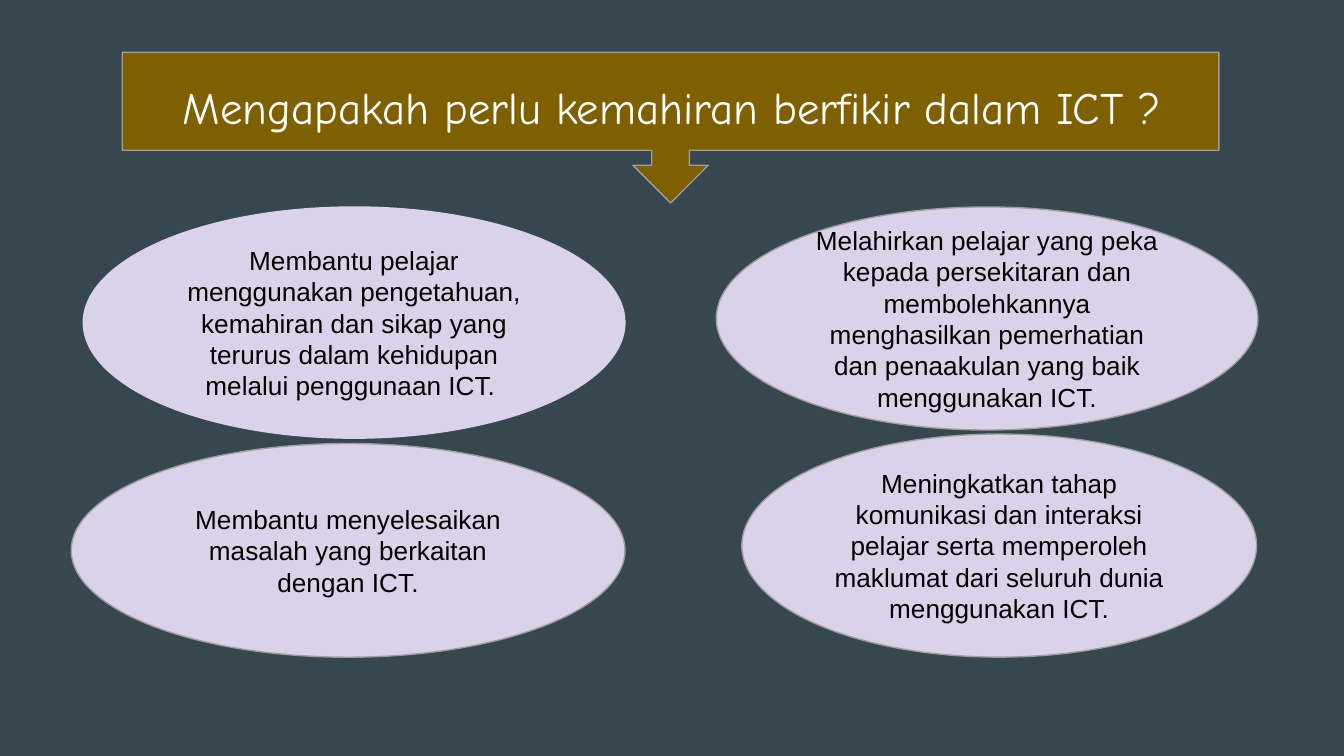
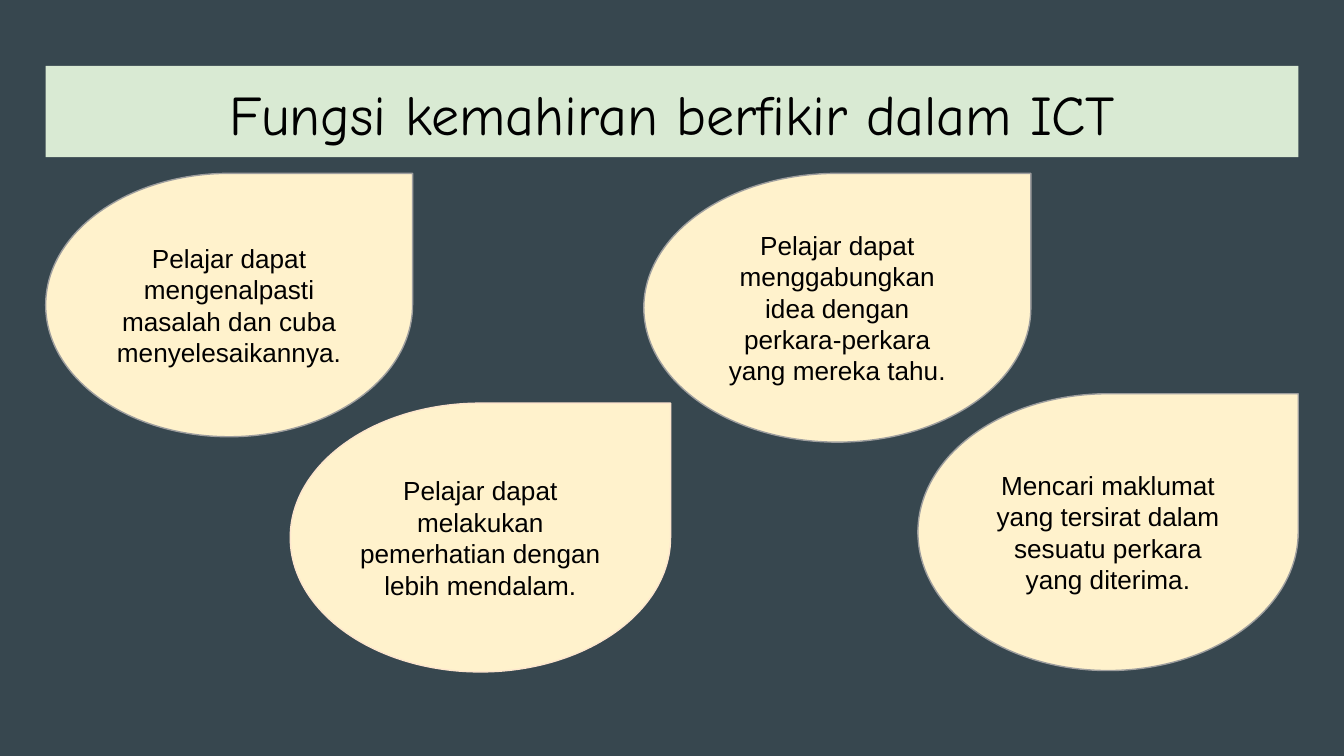
from pptx import Presentation
from pptx import util as u
from pptx.dml.color import RGBColor
from pptx.enum import shapes, text

COLORS = {
    "page": "37474F", "ink": "000000", "white": "FFFFFF", "outline": "9E9E9E",
    "callout": "7F6000", "reason": "D9D2E9", "banner": "D9EAD3",
    "function": "FFF2CC", "peach": "FCE5CD",
}
TITLE_FONT, BODY_FONT = "Comic Neue", "Arial"
WIDTH = u.Inches(10)
HEIGHT = u.Emu(WIDTH * 9 // 16)
CELL = WIDTH / 100  # square grid, 100 columns across the slide
MARGIN = 3.4
TITLE_TOP = 4.9
TITLE_WIDTH = 100 - 2 * MARGIN


def color(name):
    return RGBColor.from_string(COLORS[name])


def on_grid(*cells):
    """Turn columns and rows into slide lengths."""
    return [u.Emu(round(cell * CELL)) for cell in cells]


def write(shape, words, font, size, ink, anchor):
    """Fill a shape with one centred paragraph."""
    frame = shape.text_frame
    frame.text = words
    frame.word_wrap = True
    frame.auto_size = text.MSO_AUTO_SIZE.NONE
    frame.vertical_anchor = anchor
    frame.margin_left = frame.margin_right = u.Inches(0.1)
    frame.margin_top = frame.margin_bottom = u.Inches(0.1)
    para = frame.paragraphs[0]
    para.alignment = text.PP_ALIGN.CENTER
    span = para.runs[0]
    span.font.name = font
    span.font.size = u.Pt(size)
    span.font.color.rgb = color(ink)


def add_outlined(page, kind, box, fill, line="outline"):
    shape = page.shapes.add_shape(kind, *on_grid(*box))
    shape.shadow.inherit = False
    shape.fill.solid()
    shape.fill.fore_color.rgb = color(fill)
    shape.line.color.rgb = color(line)
    shape.line.width = u.Pt(0.75)
    return shape


def place_title(page, words, height, size, ink):
    title = page.shapes.title
    title.left, title.top, title.width, title.height = on_grid(
        MARGIN, TITLE_TOP, TITLE_WIDTH, height)
    write(title, words, TITLE_FONT, size, ink, text.MSO_ANCHOR.TOP)
    return title


def add_bubbles(page, kind, fill, bubbles):
    """Draw text bubbles given as (box, line colour, words)."""
    for box, line, words in bubbles:
        bubble = add_outlined(page, kind, box, fill, line)
        write(bubble, words, BODY_FONT, 14, "ink", text.MSO_ANCHOR.MIDDLE)


def build_reasons(page):
    # Arrow callout, with the title in front of it
    callout = add_outlined(page, shapes.MSO_SHAPE.DOWN_ARROW_CALLOUT,
                           (9.1, 3.9, 81.6, 11.2), "callout")
    for index, share in enumerate((0.25, 0.25, 0.25, 0.65)):
        callout.adjustments[index] = share
    title = place_title(page, "Mengapakah perlu kemahiran berfikir dalam ICT ?",
                        6.3, 24, "white")
    callout._element.addnext(title._element)

    # Four reasons
    add_bubbles(page, shapes.MSO_SHAPE.OVAL, "reason", [
        ((6.2, 15.4, 40.3, 17.2), "reason",
         "Membantu pelajar menggunakan pengetahuan, kemahiran dan sikap yang "
         "terurus dalam kehidupan melalui penggunaan ICT. "),
        ((5.3, 33, 41.2, 15.9), "outline",
         "Membantu menyelesaikan masalah yang berkaitan dengan ICT."),
        ((53.3, 15.4, 40.3, 16.6), "outline",
         "Melahirkan pelajar yang peka kepada persekitaran dan membolehkannya "
         "menghasilkan pemerhatian dan penaakulan yang baik menggunakan ICT."),
        ((55.2, 32.3, 38.3, 16.6), "outline",
         "Meningkatkan tahap komunikasi dan interaksi pelajar serta memperoleh "
         "maklumat dari seluruh dunia menggunakan ICT."),
    ])


def build_functions(page):
    # Title banner
    title = place_title(page, "Fungsi kemahiran berfikir dalam ICT", 6.8, 30, "ink")
    title.fill.solid()
    title.fill.fore_color.rgb = color("banner")

    # Four functions
    add_bubbles(page, shapes.MSO_SHAPE.TEAR, "function", [
        ((MARGIN, 12.9, 27.3, 19.6), "outline",
         "Pelajar dapat mengenalpasti masalah dan cuba menyelesaikannya."),
        ((21.6, 30, 28.3, 20), "peach",
         "Pelajar dapat melakukan pemerhatian dengan lebih mendalam."),
        ((68.3, 29.3, 28.3, 20.6), "outline",
         "Mencari maklumat yang tersirat dalam sesuatu perkara yang diterima."),
        ((47.9, 12.9, 28.8, 20), "outline",
         "Pelajar dapat menggabungkan idea dengan perkara-perkara yang mereka tahu."),
    ])


def main():
    deck = Presentation()
    deck.slide_width, deck.slide_height = WIDTH, HEIGHT
    backdrop = deck.slide_master.background.fill
    backdrop.solid()
    backdrop.fore_color.rgb = color("page")
    title_only = deck.slide_layouts.get_by_name("Title Only")
    for build in (build_reasons, build_functions):
        build(deck.slides.add_slide(title_only))
    deck.save("out.pptx")


if __name__ == "__main__":
    main()
